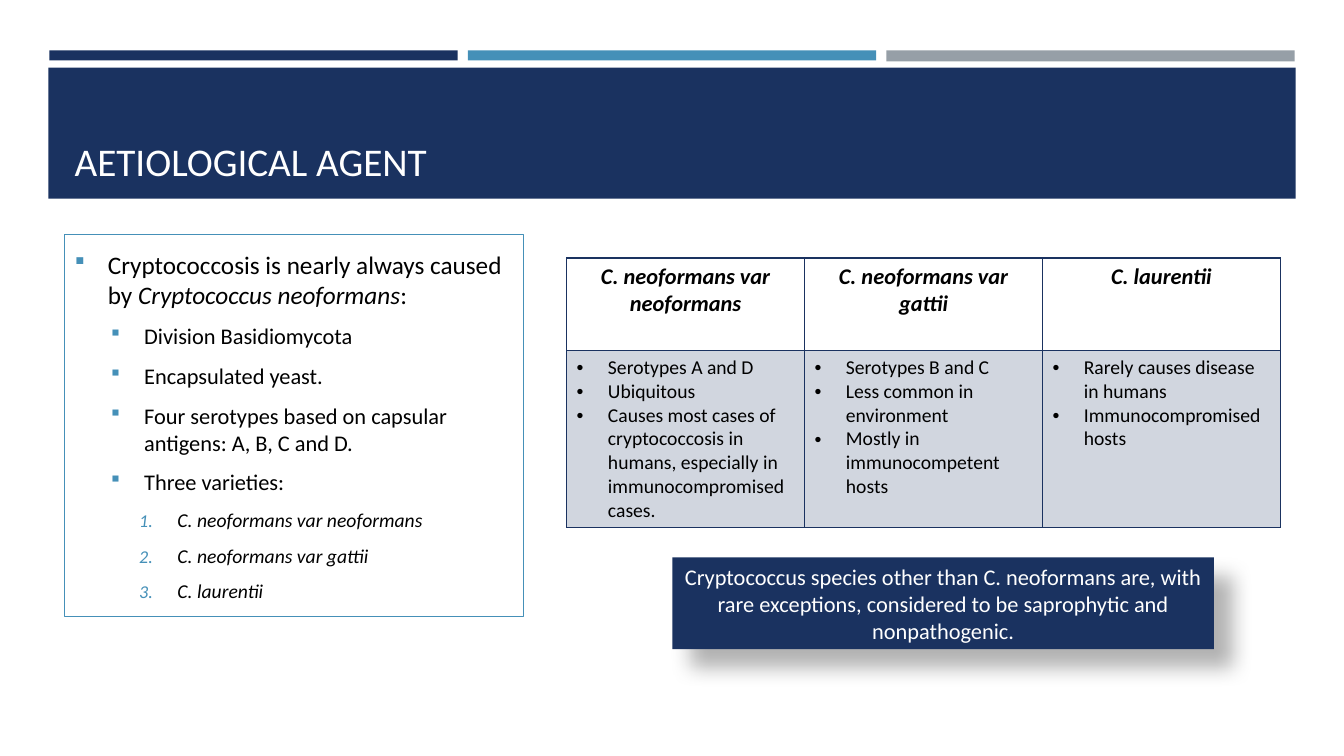
from pptx import Presentation
from pptx.dml.color import RGBColor
from pptx.enum.shapes import MSO_SHAPE
from pptx.enum.text import MSO_ANCHOR, MSO_AUTO_SIZE, PP_ALIGN
from pptx.util import Inches, Pt
from lxml.etree import fromstring

NAVY, BLUE, GREY, BLACK, WHITE = "1A3260", "4590B8", "969FA7", "000000", "FFFFFF"
NAMESPACE = 'xmlns:a="http://schemas.openxmlformats.org/drawingml/2006/main"'


def add_text(para, text, size, color, bold=False, italic=False):
    span = para.add_run()
    span.text = text
    span.font.name = "Calibri"
    span.font.size = Pt(size)
    span.font.bold = bold
    span.font.italic = italic
    span.font.color.rgb = RGBColor.from_string(color)


def set_bullet(para, margin, hang, *tags):
    """Give a paragraph a hanging indent and the bullet described by tags."""
    properties = para._p.get_or_add_pPr()
    properties.set("marL", str(Inches(margin)))
    properties.set("indent", str(-Inches(hang)))
    for tag in tags:
        properties.append(fromstring(tag.replace("/>", f" {NAMESPACE}/>", 1)
                                     if tag.endswith("/>") and tag.count("<") == 1
                                     else tag.replace(">", f" {NAMESPACE}>", 1)))


deck = Presentation()
deck.slide_width, deck.slide_height = Inches(13.33), Inches(7.5)
page = deck.slides.add_slide(deck.slide_layouts[1])
title, body = page.placeholders

# Header band and accent strips, kept behind the title
bands = [(0.49, 0.5, 4.05, 0.1, NAVY), (4.64, 0.5, 4.05, 0.1, BLUE),
         (8.79, 0.5, 4.05, 0.11, GREY), (0.48, 0.67, 12.37, 1.3, NAVY)]
for position, (left, top, width, height, color) in enumerate(bands):
    band = page.shapes.add_shape(MSO_SHAPE.RECTANGLE, Inches(left), Inches(top),
                                 Inches(width), Inches(height))
    band.shadow.inherit = False
    band.fill.solid()
    band.fill.fore_color.rgb = RGBColor.from_string(color)
    band.line.fill.background()
    page.shapes._spTree.insert(2 + position, band._element)

# Title
title.left, title.top, title.width, title.height = map(Inches, (0.64, 0.77, 12.06, 1.11))
title.text_frame.auto_size = MSO_AUTO_SIZE.NONE
title.text_frame.vertical_anchor = MSO_ANCHOR.BOTTOM
heading = title.text_frame.paragraphs[0]
heading.alignment = PP_ALIGN.LEFT
add_text(heading, "AETIOLOGICAL AGENT", 28, WHITE)

# Outlined list
body.left, body.top, body.width, body.height = map(Inches, (0.64, 2.33, 4.55, 3.79))
body.line.color.rgb = RGBColor.from_string(BLUE)
body.line.width = Pt(0.75)
frame = body.text_frame
frame.auto_size = MSO_AUTO_SIZE.NONE
frame.vertical_anchor = MSO_ANCHOR.MIDDLE
varieties = ["C. neoformans var neoformans", "C. neoformans var gattii", "C. laurentii"]
facts = ["Division Basidiomycota", "Encapsulated yeast.",
         "Four serotypes based on capsular antigens: A, B, C and D.", "Three varieties:"]
items = [(0, [("Cryptococcosis is nearly always caused by ", False),
              ("Cryptococcus neoformans", True), (":", False)])]
items += [(1, [(fact, False)]) for fact in facts]
items += [(2, [(variety, True)]) for variety in varieties]
levels = [(18, 0.33, 0.33), (16, 0.69, 0.33), (14, 1.02, 0.38)]
square = ['<a:buFont typeface="Wingdings"/>', '<a:buChar char="§"/>']
number = ['<a:buFont typeface="+mj-lt"/>', '<a:buAutoNum type="arabicPeriod"/>']
for index, (level, spans) in enumerate(items):
    para = frame.add_paragraph() if index else frame.paragraphs[0]
    para.level = level
    para.space_after = Pt(6)
    size, margin, hang = levels[level]
    set_bullet(para, margin, hang, f'<a:buClr><a:srgbClr val="{BLUE}"/></a:buClr>',
               '<a:buSzPct val="92000"/>', *(number if level == 2 else square))
    for text, italic in spans:
        add_text(para, text, size, BLACK, italic=italic)

# Table of varieties
traits = [["Serotypes A and D", "Ubiquitous",
           "Causes most cases of cryptococcosis in humans, especially in immunocompromised cases."],
          ["Serotypes B and C", "Less common in environment", "Mostly in immunocompetent hosts"],
          ["Rarely causes disease in humans", "Immunocompromised hosts"]]
table = page.shapes.add_table(2, 3, Inches(5.62), Inches(2.56), Inches(7.08), Inches(2.67)).table
table.horz_banding = False
table.rows[0].height, table.rows[1].height = Inches(0.92), Inches(1.75)
for column, variety in enumerate(varieties):
    header, detail = table.cell(0, column), table.cell(1, column)
    for cell in (header, detail):
        for side in ("lnL", "lnR", "lnT", "lnB"):
            cell._tc.get_or_add_tcPr().append(fromstring(
                f'<a:{side} {NAMESPACE} w="12700"><a:solidFill>'
                f'<a:srgbClr val="{NAVY}"/></a:solidFill></a:{side}>'))
    header.fill.background()
    detail.fill.solid()
    detail.fill.fore_color.rgb = RGBColor.from_string("D1D6DF")
    para = header.text_frame.paragraphs[0]
    para.alignment = PP_ALIGN.CENTER
    add_text(para, variety, 16, BLACK, bold=True, italic=True)
    for index, trait in enumerate(traits[column]):
        para = detail.text_frame.add_paragraph() if index else detail.text_frame.paragraphs[0]
        set_bullet(para, 0.31, 0.31, '<a:buFont typeface="Arial"/>', '<a:buChar char="•"/>')
        add_text(para, trait, 14, BLACK)

# Closing remark with a soft shadow
remark = page.shapes.add_shape(MSO_SHAPE.RECTANGLE, Inches(6.67), Inches(5.53),
                               Inches(5.37), Inches(0.91))
remark.shadow.inherit = False
remark.fill.solid()
remark.fill.fore_color.rgb = RGBColor.from_string(NAVY)
remark.line.fill.background()
remark._element.spPr.find("{*}effectLst").append(fromstring(
    f'<a:outerShdw {NAMESPACE} blurRad="{Pt(15)}" dist="{Pt(18)}" dir="2700000" algn="tl" '
    f'rotWithShape="0"><a:srgbClr val="{BLACK}"><a:alpha val="30000"/></a:srgbClr></a:outerShdw>'))
remark.text_frame.word_wrap = True
remark.text_frame.vertical_anchor = MSO_ANCHOR.MIDDLE
para = remark.text_frame.paragraphs[0]
para.alignment = PP_ALIGN.CENTER
add_text(para, "Cryptococcus species other than C. neoformans are, with rare exceptions, "
         "considered to be saprophytic and nonpathogenic.", 16, WHITE)

deck.save("out.pptx")
